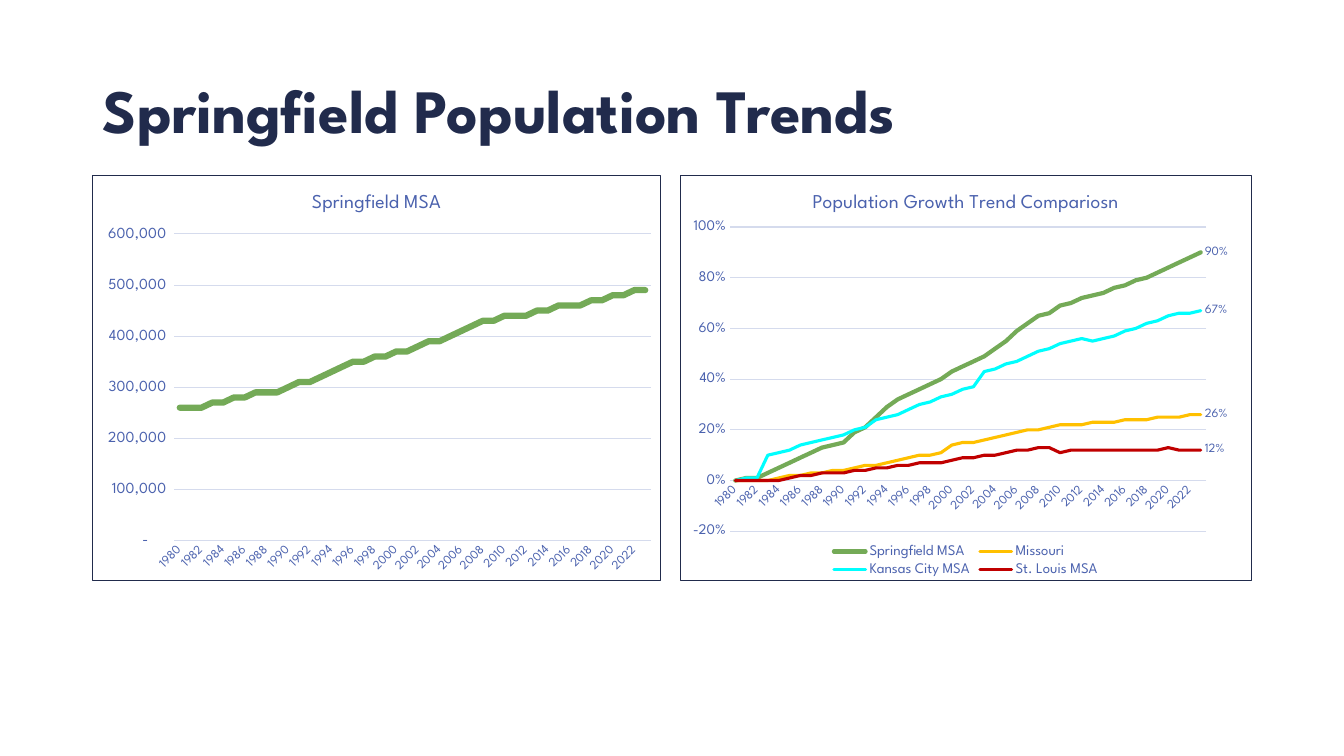
import pptx
import pptx.chart.data
import pptx.dml.color
import pptx.enum.chart
import pptx.enum.text
import pptx.oxml
import pptx.util
from pptx.util import Cm, Pt

NAVY = pptx.dml.color.RGBColor(0x21, 0x2B, 0x4C)
BLUE = pptx.dml.color.RGBColor(0x4B, 0x62, 0xAE)
GRID = pptx.dml.color.RGBColor(0xD5, 0xDB, 0xED)
GREEN = pptx.dml.color.RGBColor(0x74, 0xAA, 0x57)
GOLD = pptx.dml.color.RGBColor(0xFF, 0xC0, 0x00)
CYAN = pptx.dml.color.RGBColor(0x00, 0xFE, 0xFE)
RED = pptx.dml.color.RGBColor(0xC0, 0x00, 0x00)
FONT = "League Spartan"
NS = pptx.oxml.ns.nsdecls("c", "a")

springfield_percent = [
    0, 1, 1, 3, 5, 7, 9, 11, 13, 14, 15, 19, 21, 25, 29, 32, 34, 36, 38, 40, 43, 45,
    47, 49, 52, 55, 59, 62, 65, 66, 69, 70, 72, 73, 74, 76, 77, 79, 80, 82, 84, 86, 88, 90]
missouri_percent = [
    0, 0, 0, 0, 1, 2, 2, 3, 3, 4, 4, 5, 6, 6, 7, 8, 9, 10, 10, 11, 14, 15,
    15, 16, 17, 18, 19, 20, 20, 21, 22, 22, 22, 23, 23, 23, 24, 24, 24, 25, 25, 25, 26, 26]
kansas_city_percent = [
    0, 1, 1, 10, 11, 12, 14, 15, 16, 17, 18, 20, 21, 24, 25, 26, 28, 30, 31, 33, 34, 36,
    37, 43, 44, 46, 47, 49, 51, 52, 54, 55, 56, 55, 56, 57, 59, 60, 62, 63, 65, 66, 66, 67]
st_louis_percent = [
    0, 0, 0, 0, 0, 1, 2, 2, 3, 3, 3, 4, 4, 5, 5, 6, 6, 7, 7, 7, 8, 9,
    9, 10, 10, 11, 12, 12, 13, 13, 11, 12, 12, 12, 12, 12, 12, 12, 12, 12, 13, 12, 12, 12]
springfield_ten_thousands = [
    26, 26, 26, 27, 27, 28, 28, 29, 29, 29, 30, 31, 31, 32, 33, 34, 35, 35, 36, 36, 37, 37,
    38, 39, 39, 40, 41, 42, 43, 43, 44, 44, 44, 45, 45, 46, 46, 46, 47, 47, 48, 48, 49, 49]
years = [str(year) for year in range(1980, 2024)]


def write(frame, text, size, color, bold=False):
    frame.text = text
    paragraph = frame.paragraphs[0]
    paragraph.alignment = pptx.enum.text.PP_ALIGN.LEFT if bold else None
    font = paragraph.runs[0].font
    font.name, font.size, font.bold = FONT, Pt(size), bold
    font.color.rgb = color


def manual_layout(x, y, w, h, target=""):
    return pptx.oxml.parse_xml(
        f'<c:layout {NS}><c:manualLayout>{target}<c:xMode val="edge"/>'
        f'<c:yMode val="edge"/><c:x val="{x}"/><c:y val="{y}"/>'
        f'<c:w val="{w}"/><c:h val="{h}"/></c:manualLayout></c:layout>')


presentation = pptx.Presentation()
presentation.slide_width, presentation.slide_height = Cm(33.87), Cm(19.05)
slide = presentation.slides.add_slide(presentation.slide_layouts[5])

heading = slide.shapes.title
heading.left, heading.top, heading.width, heading.height = Cm(2.34), Cm(1.02), Cm(29.21), Cm(3.68)
write(heading.text_frame, "Springfield Population Trends", size=44, color=NAVY, bold=True)
heading.text_frame.vertical_anchor = pptx.enum.text.MSO_ANCHOR.MIDDLE
heading.text_frame.paragraphs[0].line_spacing = 0.9

panels = [
    dict(title="Population Growth Trend Compariosn", left=17.13, width=14.42,
         scale=(-0.2, 1, 0.2), number_format="0%", axis_size=10.5, divisor=100,
         plot=(0.087, 0.128, 0.834, 0.75), compared=True,
         lines=[("Springfield MSA", springfield_percent, GREEN, 3),
                ("Missouri", missouri_percent, GOLD, 2.25),
                ("Kansas City MSA", kansas_city_percent, CYAN, 2.25),
                ("St. Louis MSA", st_louis_percent, RED, 2.25)]),
    dict(title="Springfield MSA", left=2.32, width=14.35,
         scale=(0, 600000, 100000), axis_size=11, divisor=0.0001,
         number_format='_(* #,##0_);_(* \\(#,##0\\);_(* "-"??_);_(@_)',
         plot=(0.144, 0.145, 0.838, 0.756), compared=False,
         lines=[("Springfield MSA", springfield_ten_thousands, GREEN, 4.5)]),
]

for panel in panels:
    trend_data = pptx.chart.data.CategoryChartData(number_format=panel["number_format"])
    trend_data.categories = years
    for name, values, color, weight in panel["lines"]:
        trend_data.add_series(name, [round(value / panel["divisor"], 2) for value in values])
    chart = slide.shapes.add_chart(
        pptx.enum.chart.XL_CHART_TYPE.LINE, Cm(panel["left"]), Cm(4.4),
        Cm(panel["width"]), Cm(10.25), trend_data).chart
    chart.font.name, chart.font.size = FONT, Pt(10)
    chart.font.color.rgb = NAVY
    chart.has_title = True
    write(chart.chart_title.text_frame, panel["title"], size=14, color=BLUE)

    chart_space = chart.element
    chart_space.xpath("c:txPr")[0].addprevious(pptx.oxml.parse_xml(
        f'<c:spPr {NS}><a:noFill/><a:ln w="9525"><a:solidFill>'
        f'<a:srgbClr val="{NAVY}"/></a:solidFill></a:ln></c:spPr>'))
    if not chart_space.xpath("c:roundedCorners"):
        chart_space.xpath("c:date1904")[0].addnext(
            pptx.oxml.parse_xml(f'<c:roundedCorners {NS} val="0"/>'))
    plot_area = chart_space.xpath("c:chart/c:plotArea")[0]
    for automatic_layout in plot_area.xpath("c:layout"):
        plot_area.remove(automatic_layout)
    plot_area.insert(0, manual_layout(*panel["plot"], target='<c:layoutTarget val="inner"/>'))

    year_axis, value_axis = chart.category_axis, chart.value_axis
    for axis, size in ((year_axis, 9), (value_axis, panel["axis_size"])):
        axis.major_tick_mark = axis.minor_tick_mark = pptx.enum.chart.XL_TICK_MARK.NONE
        axis.tick_labels.font.name = FONT
        axis.tick_labels.font.size = Pt(size)
        axis.tick_labels.font.color.rgb = BLUE
    year_axis.has_major_gridlines = False
    value_axis.has_major_gridlines = True
    for rule in (year_axis.format.line, value_axis.major_gridlines.format.line):
        rule.color.rgb = GRID
        rule.width = Pt(0.75)
    value_axis.format.line.fill.background()
    value_axis.minimum_scale, value_axis.maximum_scale, value_axis.major_unit = panel["scale"]
    value_axis.tick_labels.number_format = panel["number_format"]
    value_axis.tick_labels.number_format_is_linked = False
    plot_area.xpath("c:catAx/c:txPr/a:bodyPr")[0].set("rot", "-2700000")
    plot_area.xpath("c:catAx/c:noMultiLvlLbl")[0].addprevious(
        pptx.oxml.parse_xml(f'<c:tickLblSkip {NS} val="2"/>'))

    chart.plots[0].vary_by_categories = False
    for series, (name, values, color, weight) in zip(chart.plots[0].series, panel["lines"]):
        series.smooth = False
        series.marker.style = pptx.enum.chart.XL_MARKER_STYLE.NONE
        series.format.line.color.rgb = color
        series.format.line.width = Pt(weight)
        if panel["compared"]:
            series.data_labels.show_value = False
            latest_label = series.points[len(years) - 1].data_label
            latest_label.font.name, latest_label.font.size = FONT, Pt(9)
            latest_label.font.color.rgb = BLUE
            latest_label.position = pptx.enum.chart.XL_LABEL_POSITION.RIGHT
    for stroke in plot_area.xpath("c:lineChart/c:ser/c:spPr/a:ln"):
        stroke.set("cap", "rnd")

    chart.has_legend = panel["compared"]
    if chart.has_legend:
        legend = chart.legend
        legend.position = pptx.enum.chart.XL_LEGEND_POSITION.BOTTOM
        legend.include_in_layout = False
        legend.font.name, legend.font.size = FONT, Pt(10.5)
        legend.font.color.rgb = BLUE
        legend_element = chart_space.xpath("c:chart/c:legend")[0]
        for automatic_layout in legend_element.xpath("c:layout"):
            legend_element.remove(automatic_layout)
        legend_element.xpath("c:legendPos")[0].addnext(manual_layout(0.26, 0.9, 0.48, 0.1))

presentation.save("out.pptx")
